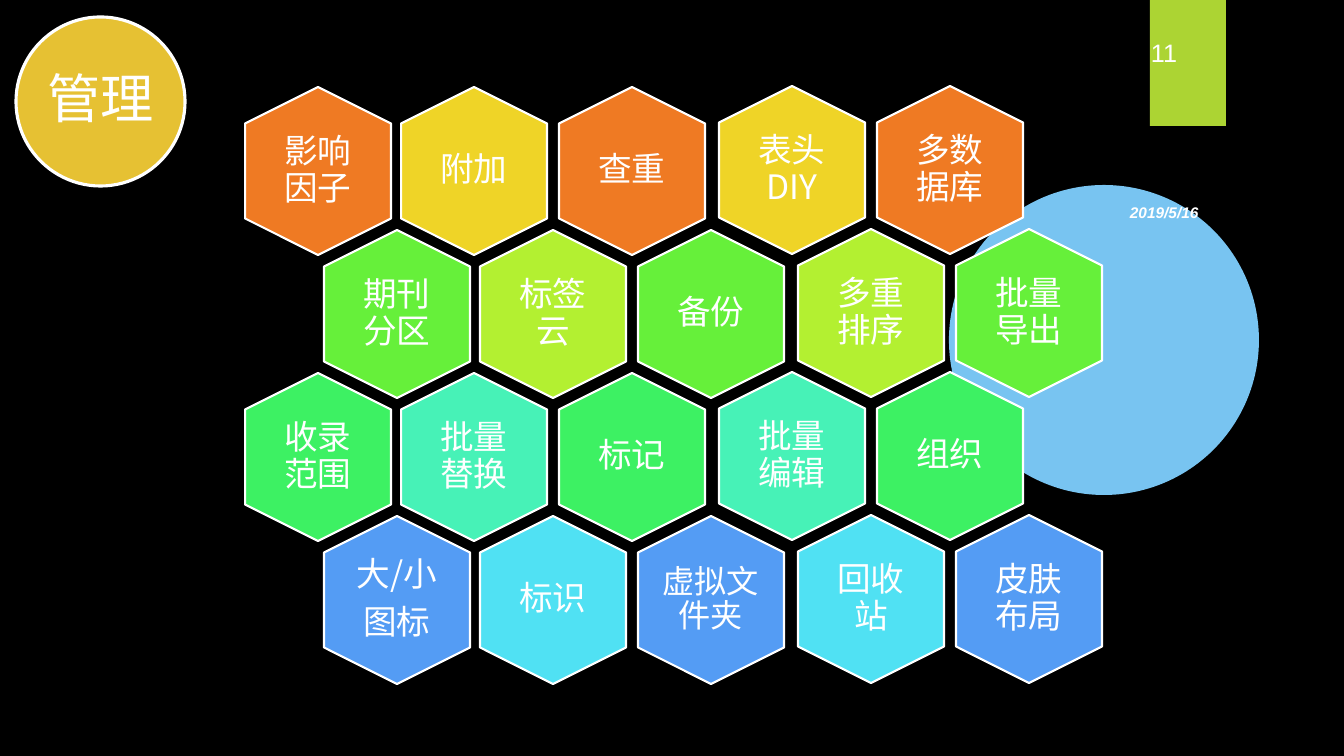
from dataclasses import dataclass

from lxml import etree
from pptx import Presentation
from pptx import util as u
from pptx.dml.color import RGBColor
from pptx.enum import shapes, text
from pptx.oxml.ns import qn

EMU_PER_PX = 914400 / 100.8

BLACK = RGBColor(0x00, 0x00, 0x00)
WHITE = RGBColor(0xFF, 0xFF, 0xFF)
SKY = RGBColor(0x78, 0xC4, 0xF1)
LEAF = RGBColor(0xAC, 0xD4, 0x33)
GOLD = RGBColor(0xE6, 0xC1, 0x33)
ORANGE = RGBColor(0xEF, 0x7A, 0x23)
YELLOW = RGBColor(0xEF, 0xD4, 0x27)
LIME = RGBColor(0xB3, 0xF0, 0x31)
GRASS = RGBColor(0x66, 0xF0, 0x3A)
GREEN = RGBColor(0x3D, 0xF1, 0x63)
MINT = RGBColor(0x47, 0xF2, 0xB7)
CYAN = RGBColor(0x50, 0xE1, 0xF3)
BLUE = RGBColor(0x54, 0x9C, 0xF4)

CJK_FONT = "Noto Sans CJK SC"
LABEL_FORMAT = {"name": CJK_FONT, "size": u.Pt(24)}
SMALL_LABEL_FORMAT = {"name": CJK_FONT, "size": u.Pt(23)}
TITLE_FORMAT = {"name": CJK_FONT, "size": u.Pt(38)}
DATE_FORMAT = {"name": "Arial", "size": u.Pt(11), "bold": True, "italic": True}
NUMBER_FORMAT = {"name": "Arial", "size": u.Pt(18)}
CENTRED = {
    "alignment": text.PP_ALIGN.CENTER,
    "line_spacing": 0.9,
    "space_after": u.Pt(8.4),
}

HEX_LENGTH, HEX_WIDTH = 168, 146
LABEL_WIDTH, LABEL_HEIGHT = 100, 116
COLUMN_TOPS = ((318, 171), (474, 171), (632, 171), (792, 170), (950, 170))
ROW_PITCH = 143
ODD_ROW_SHIFT = 79


@dataclass(frozen=True)
class Area:
    left: int
    top: int
    width: int
    height: int

    def emu(self) -> list[int]:
        sides = (self.left, self.top, self.width, self.height)
        return [round(side * EMU_PER_PX) for side in sides]


@dataclass(frozen=True)
class HexRow:
    """Fills alternate over the whole grid: even cells (row + column), then odd."""

    even_fill: RGBColor
    odd_fill: RGBColor
    labels: tuple[str, ...]


ROWS = (
    HexRow(ORANGE, YELLOW, ("影响因子", "附加", "查重", "表头DIY", "多数据库")),
    HexRow(LIME, GRASS, ("期刊分区", "标签云", "备份", "多重排序", "批量导出")),
    HexRow(GREEN, MINT, ("收录范围", "批量替换", "标记", "批量编辑", "组织")),
    HexRow(CYAN, BLUE, ("大/小\n图标", "标识", "虚拟文件夹", "回收站", "皮肤布局")),
)


def centred_area(x: int, y: int, width: int, height: int) -> Area:
    return Area(x - width // 2, y - height // 2, width, height)


def add_figure(page, kind, area: Area, fill: RGBColor, line_width: float = 0):
    figure = page.shapes.add_shape(kind, *area.emu())
    figure.shadow.inherit = False
    figure.fill.solid()
    figure.fill.fore_color.rgb = fill
    if line_width:
        figure.line.color.rgb = WHITE
        figure.line.width = u.Pt(line_width)
    else:
        figure.line.fill.background()
    return figure


def write(frame, words: str, font_format: dict, para_format: dict) -> None:
    """Write one white paragraph for each line of words."""
    for index, line in enumerate(words.split("\n")):
        para = frame.add_paragraph() if index else frame.paragraphs[0]
        for name, value in para_format.items():
            setattr(para, name, value)
        span = para.add_run()
        span.text = line
        for name, value in font_format.items():
            setattr(span.font, name, value)
        span.font.color.rgb = WHITE
        east_asian = etree.SubElement(span.font._element, qn("a:ea"))
        east_asian.set("typeface", font_format["name"])


def set_frame(frame, inset: float, anchor) -> None:
    settings = dict.fromkeys(
        ("margin_left", "margin_top", "margin_right", "margin_bottom"),
        u.Inches(inset),
    )
    settings.update(word_wrap=True, vertical_anchor=anchor)
    for name, value in settings.items():
        setattr(frame, name, value)


def add_note(page, area: Area, words: str, font_format: dict) -> None:
    frame = page.shapes.add_textbox(*area.emu()).text_frame
    set_frame(frame, 0.1, text.MSO_ANCHOR.TOP)
    frame.margin_top = frame.margin_bottom = u.Inches(0.05)
    write(frame, words, font_format, {})


def add_hexagon(page, x: int, y: int, fill: RGBColor, label: str, inset: float) -> None:
    hexagon = add_figure(
        page,
        shapes.MSO_SHAPE.HEXAGON,
        centred_area(x, y, HEX_LENGTH, HEX_WIDTH),
        fill,
        1.5,
    )
    hexagon.rotation = 90
    area = centred_area(x, y, LABEL_WIDTH, LABEL_HEIGHT)
    frame = page.shapes.add_textbox(*area.emu()).text_frame
    set_frame(frame, inset, text.MSO_ANCHOR.MIDDLE)
    font_format = SMALL_LABEL_FORMAT if label == "虚拟文件夹" else LABEL_FORMAT
    write(frame, label, font_format, CENTRED)


def add_honeycomb(page) -> None:
    for row_index, row in enumerate(ROWS):
        shift = ODD_ROW_SHIFT * (row_index % 2)
        for column, ((x, y), label) in enumerate(zip(COLUMN_TOPS, row.labels)):
            odd = (row_index + column) % 2
            fill = row.odd_fill if odd else row.even_fill
            inset = 0 if odd else 0.1
            add_hexagon(page, x + shift, y + ROW_PITCH * row_index, fill, label, inset)


def main() -> None:
    deck = Presentation()
    deck.slide_width, deck.slide_height = Area(0, 0, 1344, 756).emu()[2:]
    page = deck.slides.add_slide(deck.slide_layouts[6])
    page.background.fill.solid()
    page.background.fill.fore_color.rgb = BLACK

    add_figure(page, shapes.MSO_SHAPE.OVAL, Area(949, 185, 310, 310), SKY)
    add_figure(page, shapes.MSO_SHAPE.RECTANGLE, Area(1150, 0, 76, 126), LEAF)
    add_note(page, Area(1120, 198, 109, 33), "2019/5/16", DATE_FORMAT)
    add_note(page, Area(1141, 32, 93, 85), "11", NUMBER_FORMAT)

    title = add_figure(page, shapes.MSO_SHAPE.OVAL, Area(16, 17, 169, 169), GOLD, 2.25)
    set_frame(title.text_frame, 0.05, text.MSO_ANCHOR.MIDDLE)
    write(title.text_frame, "管理", TITLE_FORMAT, CENTRED)

    add_honeycomb(page)
    deck.save("out.pptx")


if __name__ == "__main__":
    main()
